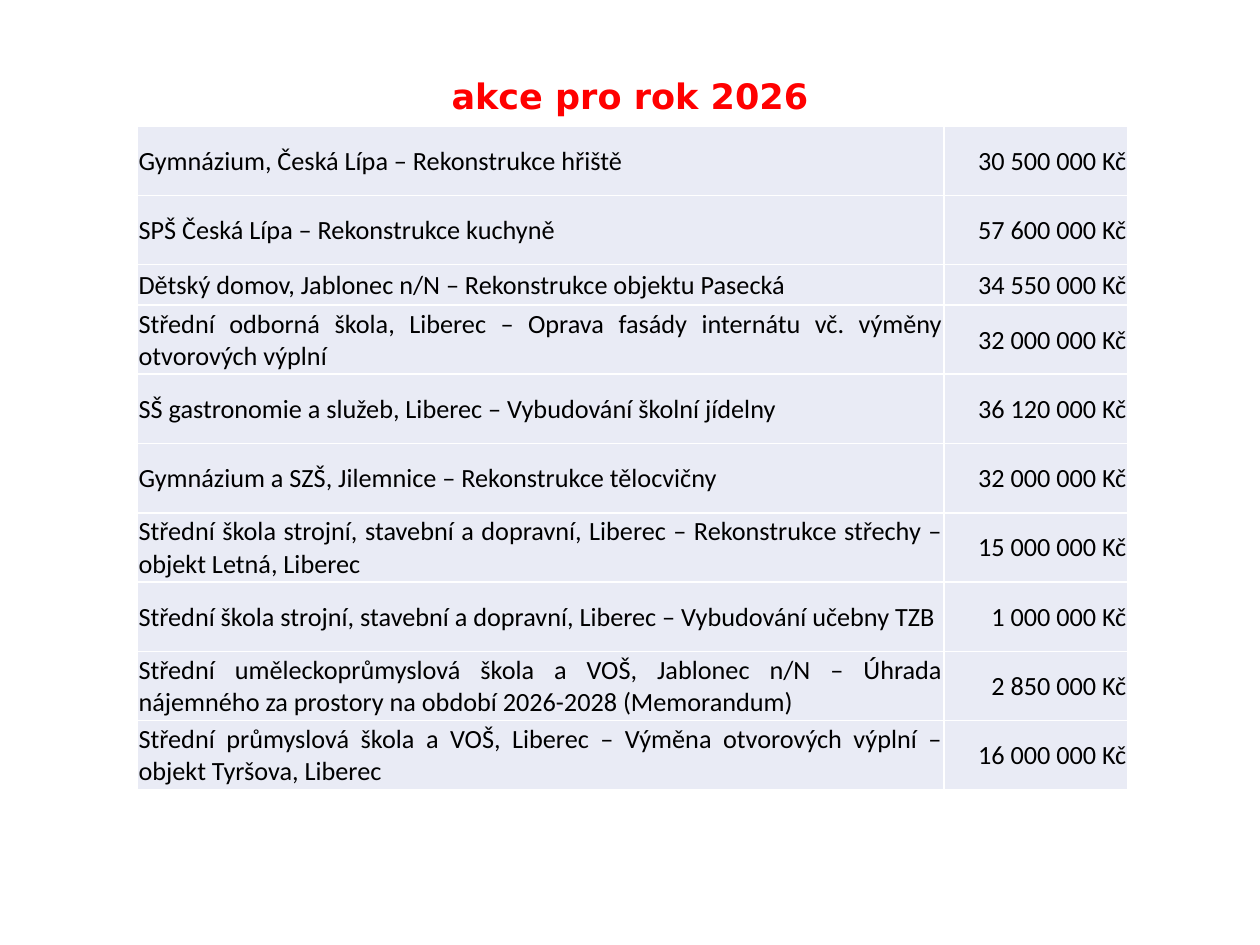
from lxml.etree import SubElement
from pptx import Presentation
from pptx.dml.color import RGBColor
from pptx.enum.text import MSO_ANCHOR, MSO_AUTO_SIZE, PP_ALIGN
from pptx.oxml.ns import qn
from pptx.util import Inches, Pt

PROJECTS = [
    ("Gymnázium, Česká Lípa – Rekonstrukce hřiště", "30 500 000 Kč"),
    ("SPŠ Česká Lípa – Rekonstrukce kuchyně", "57 600 000 Kč"),
    ("Dětský domov, Jablonec n/N – Rekonstrukce objektu Pasecká", "34 550 000 Kč"),
    ("Střední odborná škola, Liberec – Oprava fasády internátu vč. výměny otvorových výplní", "32 000 000 Kč"),
    ("SŠ gastronomie a služeb, Liberec – Vybudování školní jídelny", "36 120 000 Kč"),
    ("Gymnázium a SZŠ, Jilemnice – Rekonstrukce tělocvičny", "32 000 000 Kč"),
    ("Střední škola strojní, stavební a dopravní, Liberec – Rekonstrukce střechy – objekt Letná, Liberec",
     "15 000 000 Kč"),
    ("Střední škola strojní, stavební a dopravní, Liberec – Vybudování učebny TZB", "1 000 000 Kč"),
    ("Střední uměleckoprůmyslová škola a VOŠ, Jablonec n/N – Úhrada nájemného za prostory "
     "na období 2026-2028 (Memorandum)", "2 850 000 Kč"),
    ("Střední průmyslová škola a VOŠ, Liberec – Výměna otvorových výplní – objekt Tyršova, Liberec",
     "16 000 000 Kč"),
]
COLUMN_WIDTHS = [6.4, 1.46]
ROW_HEIGHTS = [0.55, 0.55, 0.32] + [0.55] * 7


def color(value):
    return RGBColor.from_string(value)


class BudgetSlide:
    title_font = "DejaVu Sans"
    body_font = "Calibri"
    title_color = "FF0000"
    text_color = "000000"
    cell_color = "E9EBF5"
    border_color = "FFFFFF"

    def __init__(self, presentation):
        self.slide = presentation.slides.add_slide(presentation.slide_layouts[5])

    def format_text(self, paragraph, font_name, size, hex_color, alignment, bold=False):
        paragraph.alignment = alignment
        for run in paragraph.runs:
            run.font.name = font_name
            run.font.size = Pt(size)
            run.font.bold = bold
            run.font.color.rgb = color(hex_color)

    def add_title(self, text, left, top, width, height):
        title = self.slide.shapes.title
        title.left, title.top = Inches(left), Inches(top)
        title.width, title.height = Inches(width), Inches(height)
        frame = title.text_frame
        frame.text = text
        frame.word_wrap = True
        frame.auto_size = MSO_AUTO_SIZE.SHAPE_TO_FIT_TEXT
        frame.vertical_anchor = MSO_ANCHOR.MIDDLE
        heading = frame.paragraphs[0]
        heading.line_spacing = 0.9
        self.format_text(heading, self.title_font, 20, self.title_color, PP_ALIGN.CENTER, True)

    def add_borders(self, cell):
        properties = cell._tc.get_or_add_tcPr()
        for side in ("a:lnL", "a:lnR", "a:lnT", "a:lnB"):
            border = SubElement(properties, qn(side), w=str(Pt(1)))
            fill = SubElement(border, qn("a:solidFill"))
            SubElement(fill, qn("a:srgbClr"), val=self.border_color)

    def format_cell(self, cell, text, alignment):
        cell.text_frame.text = text
        cell.vertical_anchor = MSO_ANCHOR.MIDDLE
        cell.margin_left = cell.margin_right = cell.margin_top = Inches(0.01)
        cell.margin_bottom = 0
        self.add_borders(cell)
        cell.fill.solid()
        cell.fill.fore_color.rgb = color(self.cell_color)
        self.format_text(cell.text_frame.paragraphs[0], self.body_font, 15, self.text_color, alignment)

    def add_budget_table(self, projects, left, top):
        table = self.slide.shapes.add_table(
            len(projects), len(COLUMN_WIDTHS), Inches(left), Inches(top),
            Inches(sum(COLUMN_WIDTHS)), Inches(sum(ROW_HEIGHTS))).table
        table.first_row = False
        table.horz_banding = False
        for column, width in zip(table.columns, COLUMN_WIDTHS):
            column.width = Inches(width)
        for row, height, project in zip(table.rows, ROW_HEIGHTS, projects):
            row.height = Inches(height)
            for cell, text, alignment in zip(row.cells, project, (PP_ALIGN.JUSTIFY, PP_ALIGN.RIGHT)):
                self.format_cell(cell, text, alignment)


def main():
    presentation = Presentation()
    presentation.slide_width, presentation.slide_height = Inches(10), Inches(7.5)
    budget = BudgetSlide(presentation)
    budget.add_budget_table(PROJECTS, 1.09, 1)
    budget.add_title("akce pro rok 2026", 0.69, 0.58, 8.62, 0.4)
    presentation.save("out.pptx")


if __name__ == "__main__":
    main()
